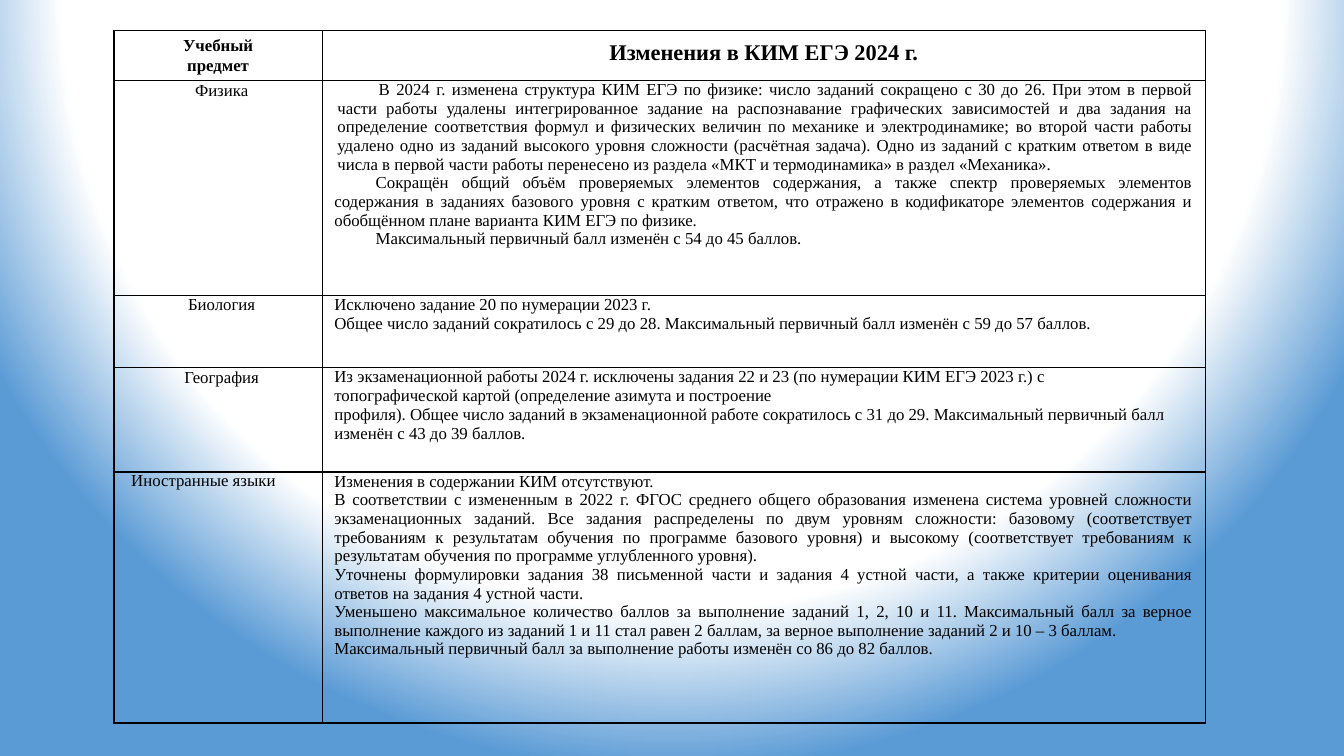
from dataclasses import dataclass

import pptx
import pptx.dml.color
import pptx.enum.text
import pptx.oxml
import pptx.oxml.ns
import pptx.presentation
import pptx.slide
import pptx.table
import pptx.util

COLORS = {"ink": "000000", "white": "FFFFFF", "blue": "5B9BD5"}
FONT = "Times New Roman"
SLIDE_WIDTH = pptx.util.Inches(13.33)
SLIDE_HEIGHT = pptx.util.Inches(7.5)
LEFT, TOP = 8.48, 4
COLUMN_SHARES = (15.5, 65.7)
ROW_SHARES = (6.67, 28.4, 9.6, 13.77, 33.2)

ALIGN = pptx.enum.text.PP_ALIGN
ANCHOR = pptx.enum.text.MSO_ANCHOR


@dataclass(frozen=True)
class Entry:
    text: str
    align: ALIGN = ALIGN.JUSTIFY
    left: float = 0.07
    right: float = 0.07
    first_line: float = 0
    line_points: float | None = None
    size: int = 12
    bold: bool = False


@dataclass(frozen=True)
class SubjectRow:
    subject: Entry
    changes: tuple[Entry, ...]
    anchor: ANCHOR = ANCHOR.TOP


def heading(text: str, size: int) -> Entry:
    return Entry(text, ALIGN.CENTER, 0, 0, line_points=13.8, size=size, bold=True)


def label(text: str, right: float = 0, line_points: float | None = 13.7) -> Entry:
    return Entry(text, ALIGN.CENTER, right=right, line_points=line_points)


ROWS = (
    SubjectRow(
        heading("Учебный\vпредмет", 12),
        (heading("Изменения в КИМ ЕГЭ 2024 г.", 16),),
        ANCHOR.MIDDLE,
    ),
    SubjectRow(
        label("Физика"),
        (
            Entry(
                "В 2024 г. изменена структура КИМ ЕГЭ по физике: число заданий сокращено с 30 до 26. "
                "При этом в первой части работы удалены интегрированное задание на распознавание "
                "графических зависимостей и два задания на определение соответствия формул и "
                "физических величин по механике и электродинамике; во второй части работы удалено "
                "одно из заданий высокого уровня сложности (расчётная задача). Одно из заданий с "
                "кратким ответом в виде числа в первой части работы перенесено из раздела "
                "«МКТ и термодинамика» в раздел «Механика».",
                left=0.1,
                first_line=0.41,
            ),
            Entry(
                "Сокращён общий объём проверяемых элементов содержания, а также спектр проверяемых "
                "элементов содержания в заданиях базового уровня с кратким ответом, что отражено в "
                "кодификаторе элементов содержания и обобщённом плане варианта КИМ ЕГЭ по физике.",
                first_line=0.41,
            ),
            Entry(
                "Максимальный первичный балл изменён с 54 до 45 баллов.",
                first_line=0.41,
                line_points=12.9,
            ),
        ),
    ),
    SubjectRow(
        label("Биология"),
        (
            Entry("Исключено задание 20 по нумерации 2023 г.", ALIGN.LEFT, line_points=13.7),
            Entry(
                "Общее число заданий сократилось с 29 до 28. Максимальный первичный балл изменён "
                "с 59 до 57 баллов.",
                ALIGN.LEFT,
                line_points=13.5,
            ),
        ),
    ),
    SubjectRow(
        label("География", line_points=13.5),
        (
            Entry(
                "Из экзаменационной работы 2024 г. исключены задания 22 и 23 (по нумерации КИМ ЕГЭ "
                "2023 г.) с топографической картой (определение азимута и построение",
                ALIGN.LEFT,
                right=0.7,
            ),
            Entry(
                "профиля). Общее число заданий в экзаменационной работе сократилось с 31 до 29. "
                "Максимальный первичный балл изменён с 43 до 39 баллов.",
                ALIGN.LEFT,
                line_points=13.5,
            ),
        ),
    ),
    SubjectRow(
        label("Иностранные языки", right=0.36, line_points=None),
        (
            Entry("Изменения в содержании КИМ отсутствуют.", line_points=13.5),
            Entry(
                "В соответствии с измененным в 2022 г. ФГОС среднего общего образования изменена "
                "система уровней сложности экзаменационных заданий. Все задания распределены по "
                "двум уровням сложности: базовому (соответствует требованиям к результатам обучения "
                "по программе базового уровня) и высокому (соответствует требованиям к результатам "
                "обучения по программе углубленного уровня)."
            ),
            Entry(
                "Уточнены формулировки задания 38 письменной части и задания 4 устной части, а также "
                "критерии оценивания ответов на задания 4 устной части."
            ),
            Entry(
                "Уменьшено максимальное количество баллов за выполнение заданий 1, 2, 10 и 11. "
                "Максимальный балл за верное выполнение каждого из заданий 1 и 11 стал равен "
                "2 баллам, за верное выполнение заданий 2 и 10 – 3 баллам."
            ),
            Entry(
                "Максимальный первичный балл за выполнение работы изменён со 86 до 82 баллов.",
                line_points=13.1,
            ),
        ),
    ),
)


def across(share: float) -> int:
    return round(SLIDE_WIDTH * share / 100)


def down(share: float) -> int:
    return round(SLIDE_HEIGHT * share / 100)


def paint_background(slide: pptx.slide.Slide) -> None:
    stops = ((0, "white"), (79, "white"), (100, "blue"))
    stop_xml = "".join(
        f'<a:gs pos="{position * 1000}"><a:srgbClr val="{COLORS[color]}"/></a:gs>'
        for position, color in stops
    )
    background = pptx.oxml.parse_xml(
        f'<p:bg {pptx.oxml.ns.nsdecls("p", "a")}><p:bgPr><a:gradFill rotWithShape="1">'
        f'<a:gsLst>{stop_xml}</a:gsLst><a:path path="circle">'
        '<a:fillToRect l="50000" t="-80000" r="50000" b="180000"/></a:path>'
        "</a:gradFill><a:effectLst/></p:bgPr></p:bg>"
    )
    slide.element.cSld.insert(0, background)


def format_cell(cell: pptx.table._Cell, anchor: ANCHOR) -> None:
    cell.margin_left = cell.margin_right = pptx.util.Inches(0.05)
    cell.margin_top = cell.margin_bottom = 0
    cell.vertical_anchor = anchor
    properties = cell._tc.get_or_add_tcPr()
    for side in "LRTB":
        properties.append(pptx.oxml.parse_xml(
            f'<a:ln{side} {pptx.oxml.ns.nsdecls("a")} w="{pptx.util.Pt(1)}"><a:solidFill>'
            f'<a:srgbClr val="{COLORS["ink"]}"/></a:solidFill></a:ln{side}>'
        ))
    cell.fill.background()


def write_entries(cell: pptx.table._Cell, entries: tuple[Entry, ...]) -> None:
    text_frame = cell.text_frame
    text_frame.text = "\n".join(entry.text for entry in entries)
    for paragraph, entry in zip(text_frame.paragraphs, entries):
        paragraph.alignment = entry.align
        if entry.line_points:
            paragraph.line_spacing = pptx.util.Pt(entry.line_points)
        properties = paragraph._p.get_or_add_pPr()
        indents = {"marL": entry.left, "marR": entry.right, "indent": entry.first_line}
        for name, inches in indents.items():
            properties.set(name, str(pptx.util.Inches(inches)))
        for run in paragraph.runs:
            run.font.name = FONT
            run.font.size = pptx.util.Pt(entry.size)
            run.font.bold = entry.bold
            run.font.color.rgb = pptx.dml.color.RGBColor.from_string(COLORS["ink"])


def draw_changes_table(slide: pptx.slide.Slide) -> None:
    table = slide.shapes.add_table(
        len(ROWS), len(COLUMN_SHARES), across(LEFT), down(TOP),
        across(sum(COLUMN_SHARES)), down(sum(ROW_SHARES)),
    ).table
    table.first_row = table.horz_banding = False
    for column, share in zip(table.columns, COLUMN_SHARES):
        column.width = across(share)
    for table_row, share, subject_row in zip(table.rows, ROW_SHARES, ROWS):
        table_row.height = down(share)
        contents = ((subject_row.subject,), subject_row.changes)
        for cell, entries in zip(table_row.cells, contents):
            format_cell(cell, subject_row.anchor)
            write_entries(cell, entries)


def main() -> None:
    presentation = pptx.Presentation()
    presentation.slide_width = SLIDE_WIDTH
    presentation.slide_height = SLIDE_HEIGHT
    slide = presentation.slides.add_slide(presentation.slide_layouts[6])
    paint_background(slide)
    draw_changes_table(slide)
    presentation.save("out.pptx")


if __name__ == "__main__":
    main()
